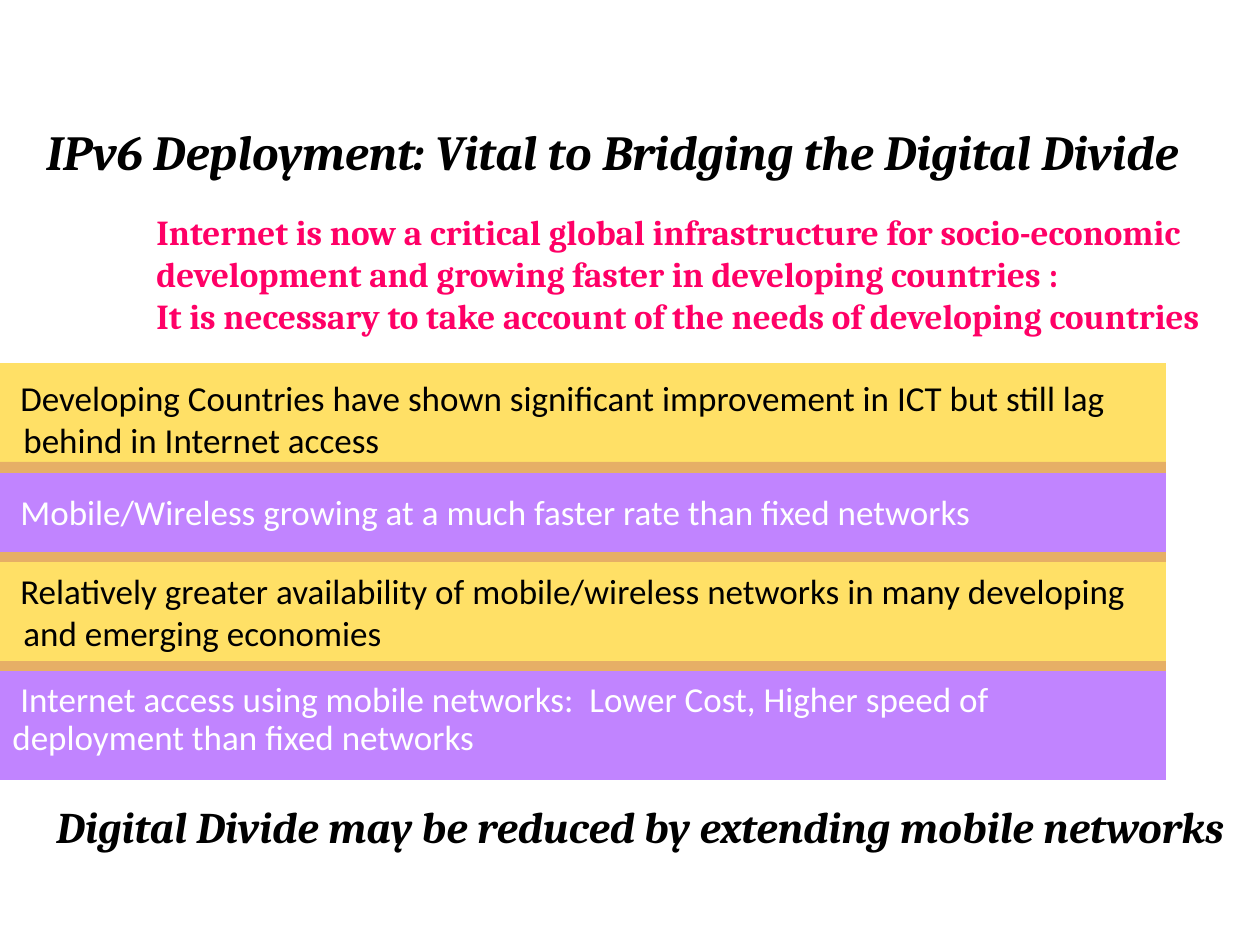
"""Build the slide on IPv6 deployment and the digital divide."""
import pptx
import pptx.dml.color
import pptx.enum.shapes
import pptx.enum.text
import pptx.util
from lxml import etree

COLORS = {"text": "000000", "light": "FFFFFF", "accent": "FF0066",
          "yellow": "FFCC00", "purple": "9933FF"}
PX = 914400 / 126
DRAWING = "{http://schemas.openxmlformats.org/drawingml/2006/main}"


class SlideBuilder:
    def __init__(self, presentation):
        self.slide = presentation.slides.add_slide(presentation.slide_layouts[6])
        self.heading_font = "Cambria"
        self.body_font = "Calibri"
        self.body_size = 20
        self.opacity = 60

    def box(self, *lengths):
        return [round(length * PX) for length in lengths]

    def color(self, name):
        return pptx.dml.color.RGBColor.from_string(COLORS[name])

    def style(self, paragraph, name, size, color, bold=False, italic=False):
        paragraph.alignment = pptx.enum.text.PP_ALIGN.LEFT
        font = paragraph.font
        font.name, font.size = name, pptx.util.Pt(size)
        font.bold, font.italic = bold, italic
        font.color.rgb = self.color(color)

    def heading(self, lines, left, top, width, height, size, color="text", italic=True):
        shape = self.slide.shapes.add_textbox(*self.box(left, top, width, height))
        frame = shape.text_frame
        frame.word_wrap = True
        frame.auto_size = pptx.enum.text.MSO_AUTO_SIZE.SHAPE_TO_FIT_TEXT
        frame.text = "\n".join(lines)
        for paragraph in frame.paragraphs:
            self.style(paragraph, self.heading_font, size, color, True, italic)

    def band(self, text, top, height, fill, color, hanging=True):
        shape = self.slide.shapes.add_shape(
            pptx.enum.shapes.MSO_SHAPE.RECTANGLE, *self.box(0, top, 1166, height))
        shape.shadow.inherit = False
        shape.line.fill.background()
        shape.fill.solid()
        shape.fill.fore_color.rgb = self.color(fill)
        solid = shape.fill._xPr.find(f"{DRAWING}solidFill")
        etree.SubElement(solid[0], f"{DRAWING}alpha", val=str(self.opacity * 1000))
        frame = shape.text_frame
        frame.word_wrap = True
        frame.vertical_anchor = pptx.enum.text.MSO_ANCHOR.MIDDLE
        frame.text = text
        paragraph = frame.paragraphs[0]
        self.style(paragraph, self.body_font, self.body_size, color)
        if hanging:
            indent = round(11 * PX)
            paragraph.space_before = pptx.util.Pt(4)
            properties = paragraph._p.get_or_add_pPr()
            properties.set("marL", str(indent))
            properties.set("indent", str(-indent))
        else:
            paragraph.line_spacing = 0.9


def main():
    presentation = pptx.Presentation()
    presentation.slide_width = pptx.util.Inches(10)
    presentation.slide_height = pptx.util.Inches(7.5)
    builder = SlideBuilder(presentation)

    builder.heading(["IPv6 Deployment: Vital to Bridging the Digital Divide"],
                    34, 115, 1226, 72, 28)
    builder.band(" Mobile/Wireless growing at a much faster rate than fixed networks",
                 462, 100, "purple", "light")
    builder.band(" Internet access using mobile networks:  Lower Cost, Higher speed of "
                 "deployment than fixed networks", 661, 119, "purple", "light", hanging=False)
    builder.band(" Developing Countries have shown significant improvement in ICT "
                 "but still lag behind in Internet access", 363, 110, "yellow", "text")
    builder.band(" Relatively greater availability of mobile/wireless networks in many "
                 "developing and emerging economies", 552, 119, "yellow", "text")
    builder.heading(["Digital Divide may be reduced by extending mobile networks"],
                    44, 794, 1216, 66, 25)
    builder.heading(["Internet is now a critical global infrastructure for socio-economic "
                     "development and growing faster in developing countries :",
                     "It is necessary to take account of the needs of developing countries"],
                    144, 204, 1116, 139, 20, "accent", italic=False)
    presentation.save("out.pptx")


if __name__ == "__main__":
    main()
